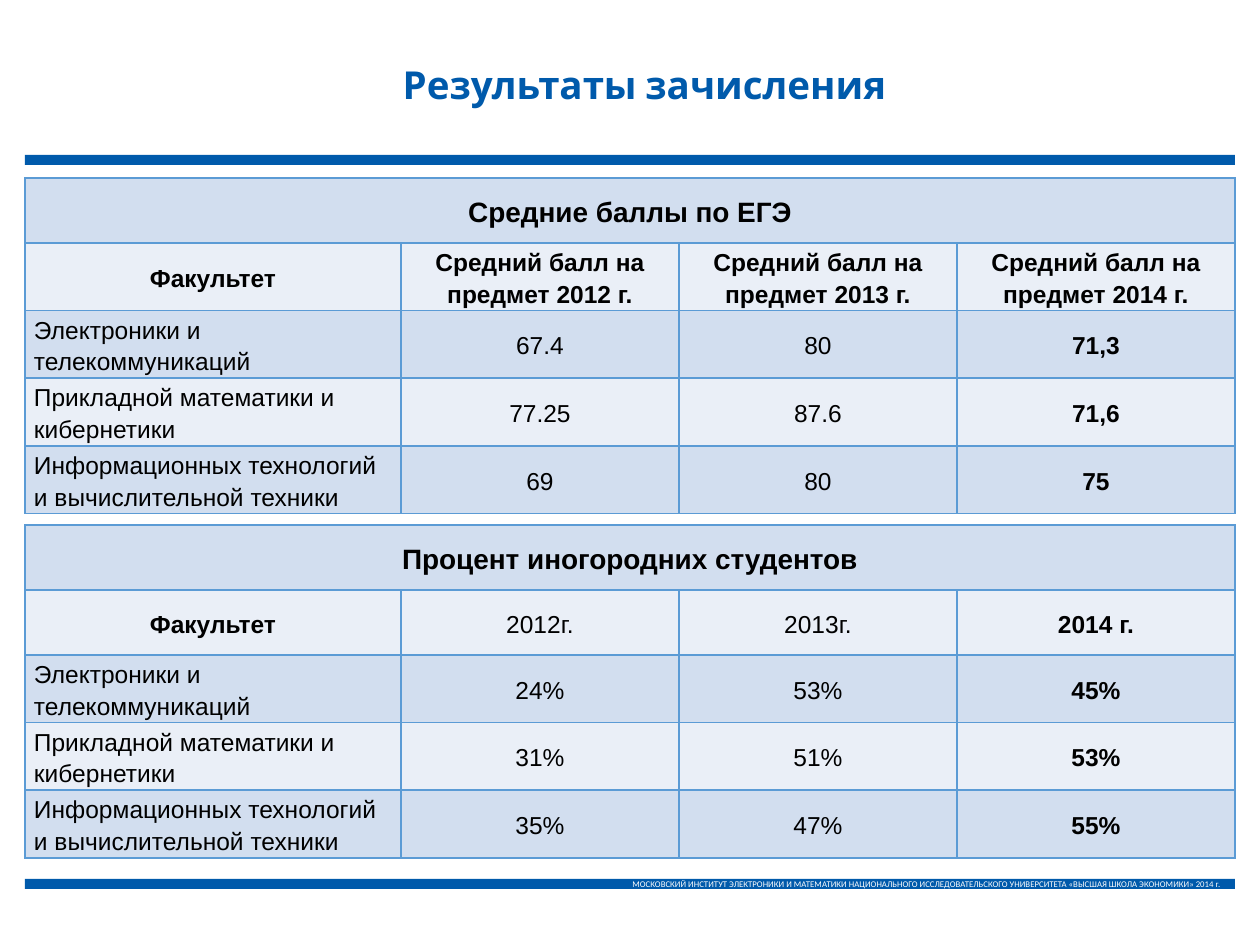
import pptx
import pptx.util
import pptx.dml.color
import pptx.enum.shapes
import pptx.enum.text
import pptx.oxml
import pptx.oxml.ns

PX = 914400 / 126
BLUE, BORDER, BANDS = "005AAB", "5B9BD5", ("D2DEEF", "EAEFF7")
LEFT, WIDTH = 25, 1210
COLS, ROW_H = (376, 278, 278, 278), 65
ALIGN = pptx.enum.text.PP_ALIGN
MIDDLE = pptx.enum.text.MSO_ANCHOR.MIDDLE


def px(*values):
    return [round(v * PX) for v in values]


def add_run(p, text, size, font, color, bold=False):
    r = p.add_run()
    r.text = text
    r.font.size = pptx.util.Pt(size)
    r.font.name = font
    r.font.bold = bold
    r.font.color.rgb = pptx.dml.color.RGBColor.from_string(color)


prs = pptx.Presentation()
prs.slide_width, prs.slide_height = px(1260, 945)
s = prs.slides.add_slide(prs.slide_layouts[6])

# Bars under the title and at the foot
footer = ("МОСКОВСКИЙ ИНСТИТУТ ЭЛЕКТРОНИКИ И МАТЕМАТИКИ НАЦИОНАЛЬНОГО "
          "ИССЛЕДОВАТЕЛЬСКОГО УНИВЕРСИТЕТА «ВЫСШАЯ ШКОЛА ЭКОНОМИКИ» 2014 г.")
for top, text in ((155, ""), (879, footer)):
    sp = s.shapes.add_shape(pptx.enum.shapes.MSO_SHAPE.RECTANGLE,
                            *px(LEFT, top, WIDTH, 10))
    sp.shadow.inherit = False
    sp.fill.solid()
    sp.fill.fore_color.rgb = pptx.dml.color.RGBColor.from_string(BLUE)
    sp.line.fill.background()
    if text:
        tf = sp.text_frame
        tf.vertical_anchor = MIDDLE
        tf.paragraphs[0].alignment = ALIGN.RIGHT
        add_run(tf.paragraphs[0], text, 5, "Calibri", "FFFFFF")

# Title
tf = s.shapes.add_textbox(*px(193, 55, 903, 59)).text_frame
tf.word_wrap = True
tf.paragraphs[0].alignment = ALIGN.CENTER
add_run(tf.paragraphs[0], "Результаты зачисления", 22, "Cabin", BLUE, True)

# Tables: top, heading, bold header columns, header labels, values by faculty
faculties = ("Электроники и телекоммуникаций",
             "Прикладной математики и кибернетики",
             "Информационных технологий и вычислительной техники")
tables = (
    (178, "Средние баллы по ЕГЭ", (0, 1, 2, 3),
     [f"Средний балл на предмет {year} г." for year in (2012, 2013, 2014)],
     (("67.4", "80", "71,3"), ("77.25", "87.6", "71,6"), ("69", "80", "75"))),
    (525, "Процент иногородних студентов", (0, 3),
     ["2012г.", "2013г.", "2014 г."],
     (("24%", "53%", "45%"), ("31%", "51%", "53%"), ("35%", "47%", "55%"))),
)
for top, heading, bold_cols, labels, values in tables:
    rows = [(heading, "", "", ""), ("Факультет", *labels)]
    rows += [(name, *row) for name, row in zip(faculties, values)]
    tbl = s.shapes.add_table(len(rows), len(COLS),
                             *px(LEFT, top, WIDTH, ROW_H * len(rows))).table
    for col, width in zip(tbl.columns, px(*COLS)):
        col.width = width
    for row in tbl.rows:
        row.height = px(ROW_H)[0]
    tbl.cell(0, 0).merge(tbl.cell(0, len(COLS) - 1))

    for i, row in enumerate(rows):
        for j, text in enumerate(row):
            cell = tbl.cell(i, j)
            cell.vertical_anchor = MIDDLE
            cell.margin_left, cell.margin_right = px(9, 9)
            cell.margin_top = cell.margin_bottom = 0
            # Borders come before the fill in the cell properties
            for side in ("L", "R", "T", "B"):
                cell._tc.get_or_add_tcPr().append(pptx.oxml.parse_xml(
                    f'<a:ln{side} {pptx.oxml.ns.nsdecls("a")} w="12700"><a:solidFill>'
                    f'<a:srgbClr val="{BORDER}"/></a:solidFill></a:ln{side}>'))
            cell.fill.solid()
            cell.fill.fore_color.rgb = pptx.dml.color.RGBColor.from_string(BANDS[i % 2])
            if text:
                p = cell.text_frame.paragraphs[0]
                p.line_spacing = 1.15
                p.alignment = ALIGN.LEFT if i > 1 and j == 0 else ALIGN.CENTER
                bold = i == 0 or j == 3 or (i == 1 and j in bold_cols)
                add_run(p, text, 16 if i == 0 else 14, "Arial", "000000", bold)

prs.save("out.pptx")
